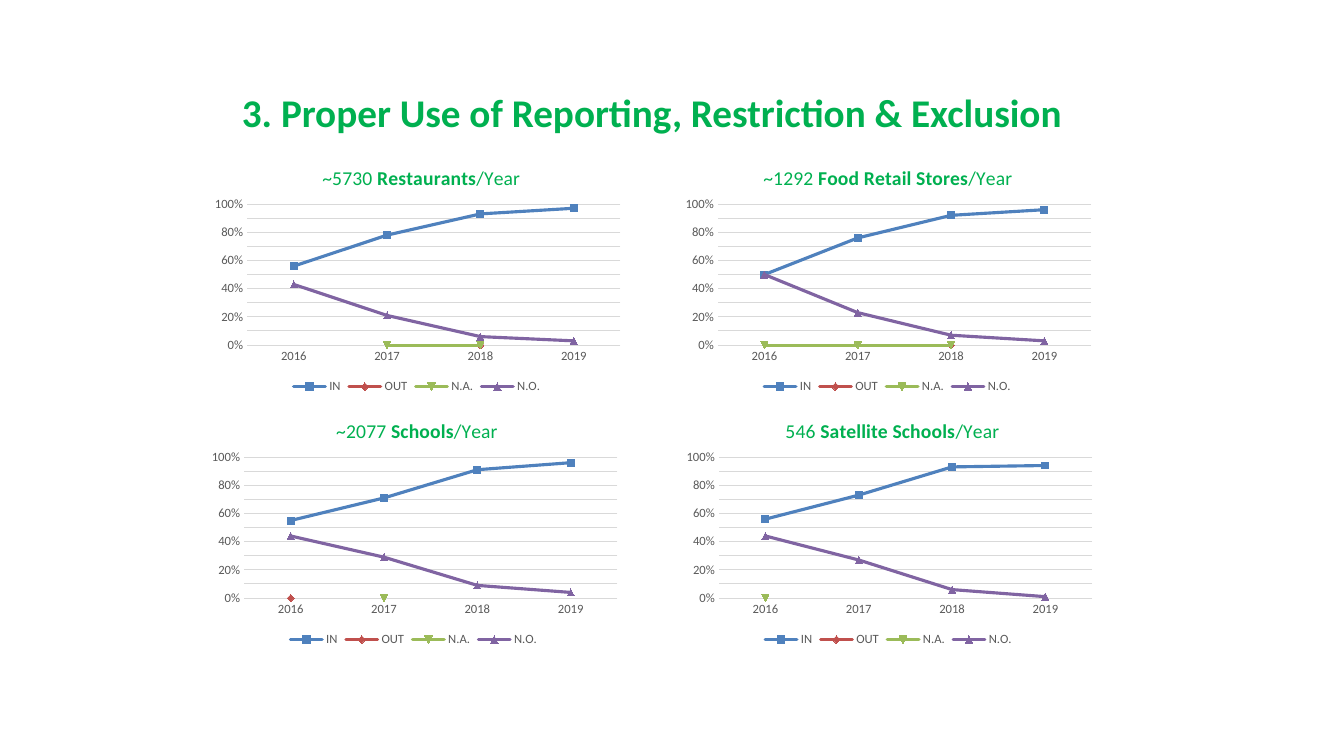
from lxml import etree
from pptx import Presentation
from pptx.chart.data import CategoryChartData
from pptx.dml.color import RGBColor
from pptx.enum.chart import XL_CHART_TYPE, XL_LEGEND_POSITION, XL_TICK_MARK
from pptx.enum.text import MSO_AUTO_SIZE, PP_ALIGN
from pptx.oxml.ns import qn
from pptx.util import Pt

LINE = XL_CHART_TYPE.LINE
BOTTOM = XL_LEGEND_POSITION.BOTTOM
NO_TICK = XL_TICK_MARK.NONE
CENTER = PP_ALIGN.CENTER
GROW = MSO_AUTO_SIZE.SHAPE_TO_FIT_TEXT

FONT = "Calibri"
COLORS = {
    "title": "00B050", "label": "595959", "grid": "D9D9D9", "text": "000000",
    "IN": "4F81BD", "OUT": "C0504D", "N.A.": "9BBB59", "N.O.": "8064A2",
}
YEARS = ["2016", "2017", "2018", "2019"]
SIZE = (303.1, 180)
ROWS = (104.4, 285.1)

# left, top, title start (share of chart width), title parts, series values
CHARTS = [
    (146.2, ROWS[0], 0.27, ("~5730 ", "Restaurants", "/Year"), {
        "IN": (0.56, 0.78, 0.93, 0.97),
        "OUT": (None, None, 0, None),
        "N.A.": (None, 0, 0, None),
        "N.O.": (0.43, 0.21, 0.06, 0.03)}),
    (482.4, ROWS[0], 0.2, ("~1292 ", "Food Retail Stores", "/Year"), {
        "IN": (0.5, 0.76, 0.92, 0.96),
        "OUT": (None, None, 0, None),
        "N.A.": (0, 0, 0, None),
        "N.O.": (0.5, 0.23, 0.07, 0.03)}),
    (144, ROWS[1], 0.31, ("~2077 ", "Schools", "/Year"), {
        "IN": (0.55, 0.71, 0.91, 0.96),
        "OUT": (0, None, None, None),
        "N.A.": (None, 0, None, None),
        "N.O.": (0.44, 0.29, 0.09, 0.04)}),
    (483.1, ROWS[1], 0.25, ("546 ", "Satellite Schools", "/Year"), {
        "IN": (0.56, 0.73, 0.93, 0.94),
        "OUT": (None, None, None, None),
        "N.A.": (0, None, None, None),
        "N.O.": (0.44, 0.27, 0.06, 0.01)}),
]


def rgb(name):
    return RGBColor.from_string(COLORS[name])


def style(font, size, color, bold=False):
    font.name, font.size, font.bold = FONT, Pt(size), bold
    font.color.rgb = rgb(color)


def place(part, index, **spots):
    """Give a chart part a manual layout, in shares of the chart size."""
    for old in part.findall(qn("c:layout")):
        part.remove(old)
    layout = etree.Element(qn("c:layout"))
    manual = etree.SubElement(layout, qn("c:manualLayout"))
    if "w" in spots:
        etree.SubElement(manual, qn("c:layoutTarget")).set("val", "inner")
    for axis in ("x", "y"):
        etree.SubElement(manual, qn(f"c:{axis}Mode")).set("val", "edge")
    for key, value in spots.items():
        etree.SubElement(manual, qn(f"c:{key}")).set("val", str(value))
    part.insert(index, layout)


def add_heading(slide, left, top, width, height):
    frame = slide.shapes.add_textbox(
        Pt(left), Pt(top), Pt(width), Pt(height)).text_frame
    frame.word_wrap = True
    frame.auto_size = GROW
    para = frame.paragraphs[0]
    para.alignment = CENTER
    run = para.add_run()
    run.text = "3. Proper Use of Reporting, Restriction & Exclusion"
    style(run.font, 28, "title", True)


def add_title(chart, start, parts):
    chart.has_title = True
    para = chart.chart_title.text_frame.paragraphs[0]
    for part, bold in zip(parts, (False, True, False)):
        run = para.add_run()
        run.text = part
        style(run.font, 14, "title", bold)
    place(chart._chartSpace.xpath("c:chart/c:title")[0], 1, x=start, y=0.06)


def style_axes(chart):
    years, shares = chart.category_axis, chart.value_axis
    for axis in (years, shares):
        axis.major_tick_mark = axis.minor_tick_mark = NO_TICK
        style(axis.tick_labels.font, 9, "label")
    shares.minimum_scale, shares.maximum_scale = 0, 1
    shares.major_unit = 0.1
    shares.tick_labels.number_format = "0%"
    shares.tick_labels.number_format_is_linked = False
    shares.format.line.fill.background()
    for line in (years.format.line, shares.major_gridlines.format.line):
        line.color.rgb = rgb("grid")
        line.width = Pt(0.75)


def add_trend(slide, left, top, width, height, start, parts, values):
    """Add one line chart of yearly shares."""
    data = CategoryChartData(number_format="0%")
    data.categories = YEARS
    for name, shares in values.items():
        data.add_series(name, shares)
    chart = slide.shapes.add_chart(
        LINE, Pt(left), Pt(top), Pt(width), Pt(height), data).chart
    style(chart.font, 10, "text")
    add_title(chart, start, parts)
    style_axes(chart)
    plot = chart.plots[0]
    plot.vary_by_categories = False
    for series in plot.series:
        series.smooth = False
        series.marker.style = None
        line = series.format.line
        line.color.rgb = rgb(series.name)
        line.width = Pt(2.25)
        series.format.line._ln.set("cap", "rnd")
    chart.has_legend = True
    chart.legend.position = BOTTOM
    chart.legend.include_in_layout = False
    style(chart.legend.font, 9, "label")
    place(chart._chartSpace.xpath("c:chart/c:plotArea")[0], 0,
          x=0.1, y=0.23, w=0.88, h=0.56)


def main():
    deck = Presentation()
    deck.slide_width, deck.slide_height = Pt(960), Pt(540)
    slide = deck.slides.add_slide(deck.slide_layouts[6])
    add_heading(slide, 146.2, 59.8, 638.6, 34.6)
    for left, top, start, parts, values in CHARTS:
        add_trend(slide, left, top, *SIZE, start, parts, values)
    deck.save("out.pptx")


if __name__ == "__main__":
    main()
